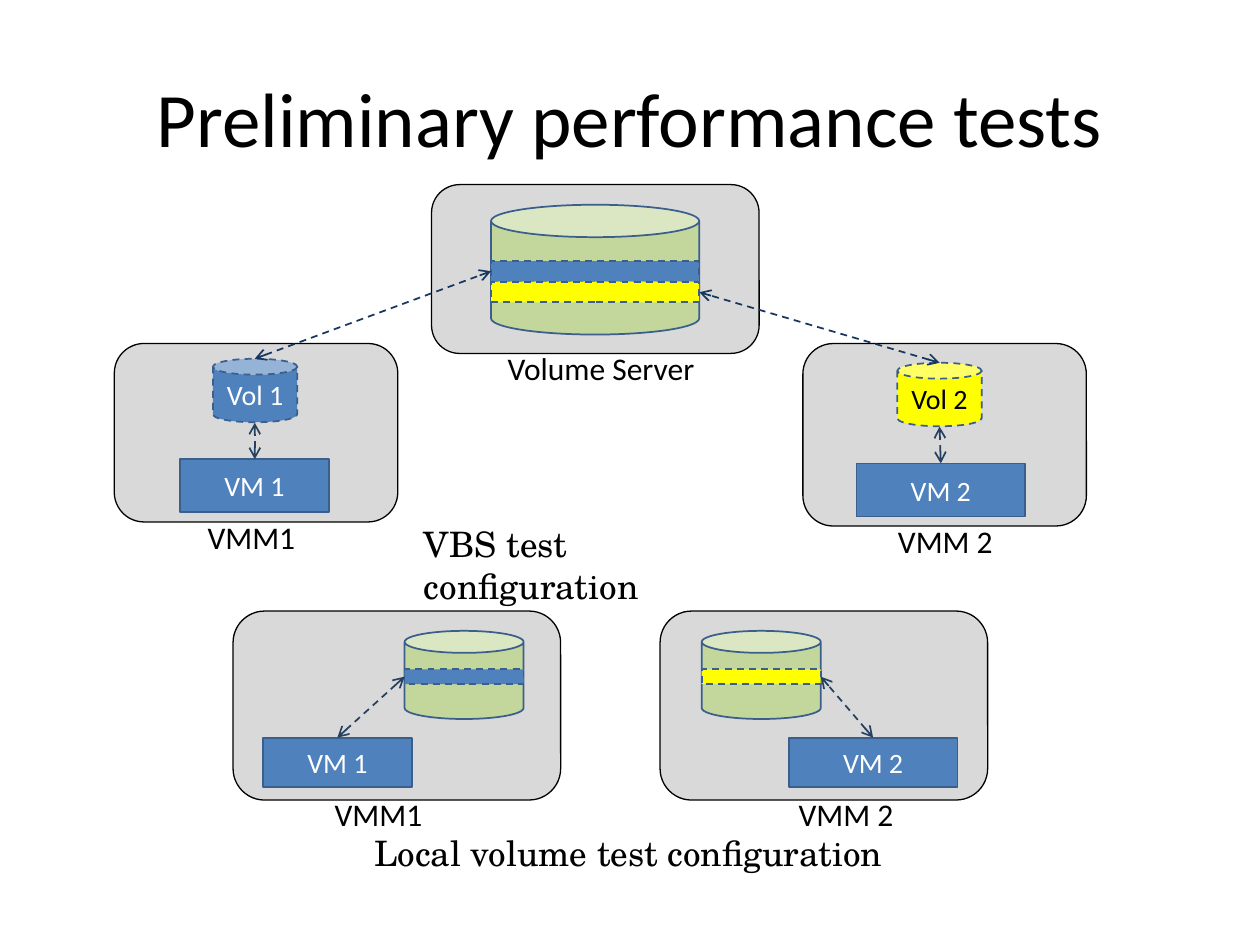
from pptx import Presentation
from pptx.dml.color import RGBColor
from pptx.enum.dml import MSO_LINE
from pptx.enum.shapes import MSO_CONNECTOR, MSO_SHAPE
from pptx.enum.text import MSO_ANCHOR, PP_ALIGN
from pptx.oxml.ns import qn
from pptx.util import Pt
from lxml.etree import SubElement

BLUE, YELLOW, GREEN, GRAY = "4F81BD", "FFFF00", "C3D69B", "D9D9D9"
BLACK, WHITE, OUTLINE = "000000", "FFFFFF", "3A5F8C"


def set_text(shape, text, size, color=BLACK, font="Calibri", align=PP_ALIGN.LEFT):
    """Write one paragraph into the shape and format it."""
    frame = shape.text_frame
    frame.word_wrap = True
    para = frame.paragraphs[0]
    para.text = text
    para.alignment = align
    para.font.name = font
    para.font.size = Pt(size)
    para.font.color.rgb = RGBColor.from_string(color)


def add_block(kind, bounds, fill, line=OUTLINE, width=1, dashed=False,
              text="", color=WHITE):
    """Add a filled, outlined shape with optional centred text."""
    block = page.shapes.add_shape(kind, *[Pt(value) for value in bounds])
    block.shadow.inherit = False
    block.fill.solid()
    block.fill.fore_color.rgb = RGBColor.from_string(fill)
    block.line.color.rgb = RGBColor.from_string(line)
    block.line.width = Pt(width)
    if dashed:
        block.line.dash_style = MSO_LINE.DASH
    if text:
        set_text(block, text, 16, color, align=PP_ALIGN.CENTER)
        block.text_frame.vertical_anchor = MSO_ANCHOR.MIDDLE


deck = Presentation()
deck.slide_width, deck.slide_height = Pt(720), Pt(540)
page = deck.slides.add_slide(deck.slide_layouts[5])

title = page.shapes.title
title.left, title.top, title.width, title.height = Pt(36), Pt(21.6), Pt(648), Pt(90)
set_text(title, "Preliminary performance tests", 44, align=PP_ALIGN.CENTER)
title.text_frame.vertical_anchor = MSO_ANCHOR.MIDDLE

# Machines
for machine in [
    (65.3, 196.3, 162, 102),
    (458.8, 196.3, 162, 104.3),
    (246.6, 105.5, 187.2, 96.5),
    (133.2, 349.2, 187.2, 108),
    (377.2, 349.2, 187.2, 108),
]:
    add_block(MSO_SHAPE.ROUNDED_RECTANGLE, machine, GRAY, BLACK, 0.75)

# Attached volumes
for left, top, fill, text, color in [
    (121.7, 205, BLUE, "Vol 1", WHITE),
    (512.8, 207.3, YELLOW, "Vol 2", BLACK),
]:
    add_block(MSO_SHAPE.CAN, (left, top, 48.2, 36.3), fill, dashed=True,
              text=text, color=color)

# Virtual machines
for left, top, width, height, text in [
    (102.8, 262.4, 85.2, 30.4, "VM 1"),
    (489.4, 264.8, 96.4, 30.4, "VM 2"),
    (150.2, 421.5, 85.2, 28.2, "VM 1"),
    (450.7, 421.5, 96.4, 28.2, "VM 2"),
]:
    add_block(MSO_SHAPE.RECTANGLE, (left, top, width, height), BLUE, text=text)

# Disks, each with the bands of the volumes stored on it
for left, top, width, height, band_height, bands in [
    (280.6, 117, 119, 74.2, 11.8, [(149.2, BLUE), (161, YELLOW)]),
    (231.2, 360.5, 68, 50.4, 8.5, [(382.5, BLUE)]),
    (401, 360.5, 68, 50.4, 8.5, [(382.5, YELLOW)]),
]:
    add_block(MSO_SHAPE.CAN, (left, top, width, height), GREEN)
    for band_top, fill in bands:
        add_block(MSO_SHAPE.RECTANGLE, (left, band_top, width, band_height), fill,
                  dashed=True)

# Data paths
for start_x, start_y, end_x, end_y, color in [
    (145.6, 262.4, 145.6, 241.6, "254061"),
    (537.6, 264.8, 536.9, 243.8, "254061"),
    (145.6, 205, 280.6, 155, "17375E"),
    (536.9, 207.3, 399.6, 167, "17375E"),
    (192.8, 421.5, 231.2, 386.7, "254061"),
    (498.9, 421.5, 469, 386.7, "254061"),
]:
    arrow = page.shapes.add_connector(
        MSO_CONNECTOR.STRAIGHT, Pt(start_x), Pt(start_y), Pt(end_x), Pt(end_y))
    arrow.line.color.rgb = RGBColor.from_string(color)
    arrow.line.width = Pt(1)
    arrow.line.dash_style = MSO_LINE.DASH
    for end in ("a:headEnd", "a:tailEnd"):
        SubElement(arrow.line._get_or_add_ln(), qn(end), type="arrow")
    SubElement(arrow._element.spPr, qn("a:effectLst"))

# Labels and captions
for text, left, top, width, size, font in [
    ("VMM1", 111.5, 292.6, 68, 18, "Calibri"),
    ("VMM 2", 506, 294.9, 73.5, 18, "Calibri"),
    ("Volume Server", 283, 196, 124.5, 18, "Calibri"),
    ("VMM1", 184.1, 450.9, 68, 18, "Calibri"),
    ("VMM 2", 449.2, 450.9, 73.5, 18, "Calibri"),
    ("VBS test configuration", 235.2, 295.2, 221, 20, "TeX Gyre Schola"),
    ("Local volume test configuration", 206.7, 471.6, 306, 20, "TeX Gyre Schola"),
]:
    box = page.shapes.add_textbox(Pt(left), Pt(top), Pt(width), Pt(size * 1.6))
    set_text(box, text, size, font=font)

deck.save("out.pptx")
